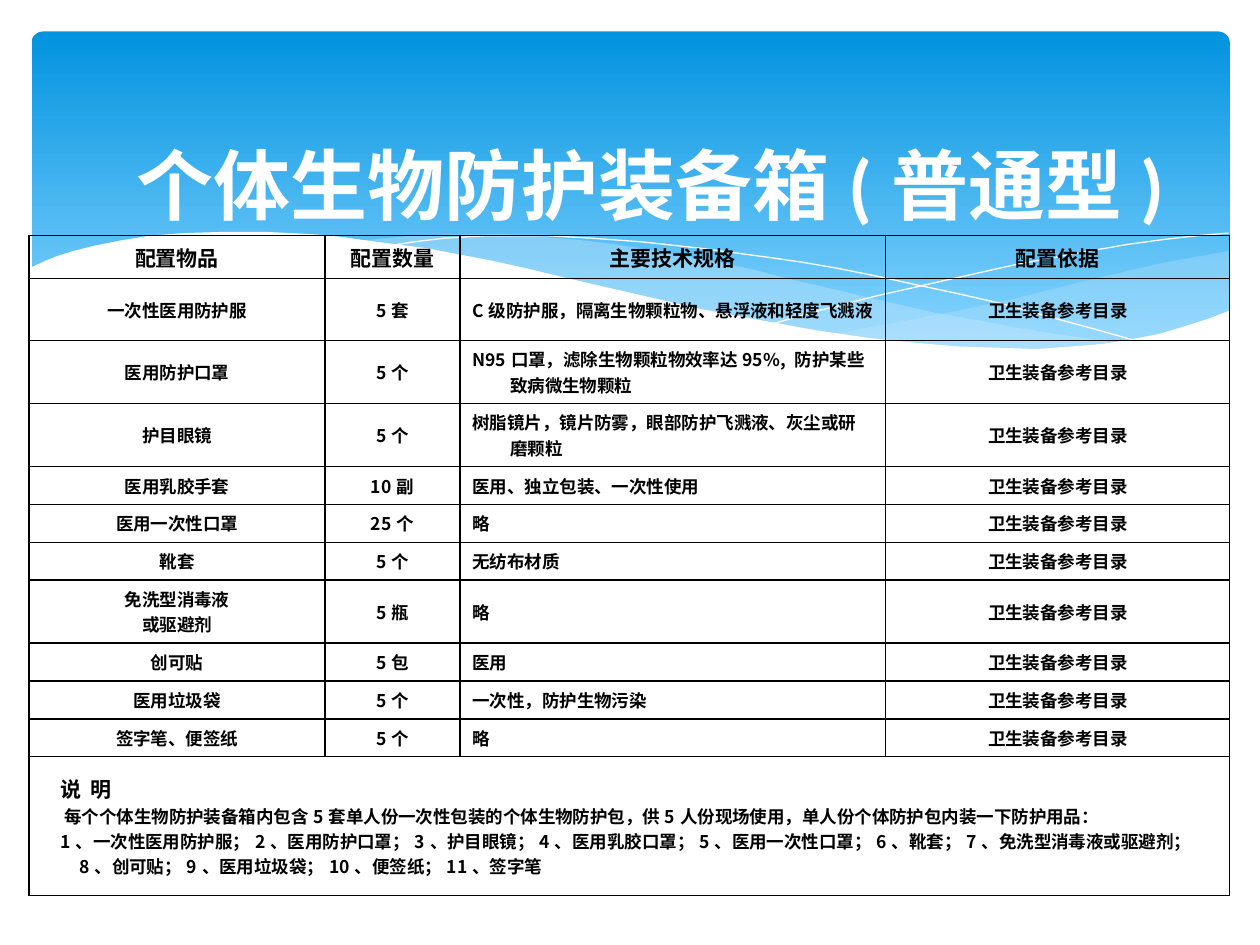
from lxml.etree import SubElement
from pptx import Presentation
from pptx.dml.color import RGBColor
from pptx.enum.shapes import MSO_SHAPE
from pptx.enum.text import MSO_ANCHOR, PP_ALIGN
from pptx.oxml.ns import qn
from pptx.util import Inches, Pt

WHITE = RGBColor(0xFF, 0xFF, 0xFF)
BLACK = RGBColor(0x00, 0x00, 0x00)
DEEP_BLUE = RGBColor(0x02, 0x93, 0xE0)
SKY_BLUE = RGBColor(0x83, 0xD3, 0xFE)
PALE_BLUE = RGBColor(0xC6, 0xE7, 0xFC)
CJK_FONT = "Noto Sans CJK SC"

RIGHT_WAVE = [
    (9.76, 1.99), (9.48, 2.04), (9.21, 2.09), (8.91, 2.16), (8.61, 2.23),
    (8.05, 2.37), (7.53, 2.48), (7.06, 2.57), (6.61, 2.65), (6.91, 2.69),
    (7.18, 2.72), (7.45, 2.75), (7.69, 2.77), (8.03, 2.78), (8.35, 2.77),
    (8.63, 2.75), (8.89, 2.72), (9.13, 2.67), (9.35, 2.61), (9.63, 2.52),
    (9.76, 2.47),
]
LONG_WAVE = [
    (8.93, 2.73), (8.66, 2.69), (8.37, 2.65), (8.07, 2.6), (7.75, 2.54),
    (7.41, 2.48), (7.06, 2.4), (6.68, 2.31), (6.29, 2.22), (5.98, 2.14),
    (5.69, 2.08), (5.41, 2.03), (5.14, 1.98), (4.89, 1.94), (4.65, 1.91),
    (4.42, 1.89), (4.2, 1.87), (3.99, 1.86), (3.61, 1.86), (3.28, 1.87),
    (2.86, 1.91), (3.23, 1.96), (3.62, 2.03), (4.04, 2.11), (4.49, 2.22),
    (4.91, 2.32), (5.3, 2.4), (5.66, 2.48), (6.01, 2.55), (6.34, 2.61),
    (6.65, 2.66), (6.95, 2.7), (7.22, 2.74), (7.48, 2.76), (7.73, 2.77),
    (7.96, 2.78), (8.28, 2.78), (8.57, 2.77), (8.76, 2.75),
]
FALLING_CURVE = [
    (3.09, 1.95), (3.28, 1.92), (3.53, 1.89), (3.87, 1.87), (4.33, 1.87),
    (4.69, 1.89), (5.1, 1.92), (5.56, 1.97), (6.08, 2.04), (6.36, 2.08),
    (6.65, 2.13), (6.95, 2.19), (7.27, 2.26), (7.6, 2.33), (7.95, 2.41),
    (8.31, 2.51), (8.68, 2.61), (9.07, 2.72),
]
RISING_CURVE = [
    (6.13, 2.57), (6.52, 2.46), (6.95, 2.35), (7.48, 2.23), (8.06, 2.1),
    (8.66, 1.99), (8.95, 1.94), (9.24, 1.9), (9.51, 1.87), (9.75, 1.85),
]
WHITE_WAVE = [
    (9.77, 2.46), (9.59, 2.53), (9.4, 2.59), (9.2, 2.65), (8.99, 2.69),
    (8.75, 2.73), (8.5, 2.75), (8.23, 2.77), (7.93, 2.76), (7.61, 2.75),
    (7.26, 2.72), (6.88, 2.68), (6.47, 2.62), (6.03, 2.54), (5.55, 2.45),
    (5.03, 2.33), (4.47, 2.2), (4.18, 2.13), (3.91, 2.07), (3.65, 2.02),
    (3.39, 1.97), (3.15, 1.94), (2.92, 1.91), (2.71, 1.88), (2.5, 1.86),
    (2.11, 1.84), (1.77, 1.84), (1.46, 1.85), (1.19, 1.87), (0.95, 1.91),
    (0.75, 1.95), (0.59, 1.99), (0.46, 2.03), (0.36, 2.07), (0.23, 2.13),
    (0.23, 3.29), (9.77, 3.29),
]

COLUMN_WIDTHS = [2.35, 1.07, 3.38, 2.73]
ROW_HEIGHTS = [0.34] + [0.49] * 3 + [0.3] * 3 + [0.49] + [0.3] * 3 + [1.1]
HEADERS = ["配置物品", "配置数量", "主要技术规格", "配置依据"]
BASIS = "卫生装备参考目录"
ITEMS = [
    ("一次性医用防护服", "5套", "C级防护服，隔离生物颗粒物、悬浮液和轻度飞溅液"),
    ("医用防护口罩", "5个", "N95口罩，滤除生物颗粒物效率达95%, 防护某些致病微生物颗粒"),
    ("护目眼镜", "5个", "树脂镜片，镜片防雾，眼部防护飞溅液、灰尘或研磨颗粒"),
    ("医用乳胶手套", "10副", "医用、独立包装、一次性使用"),
    ("医用一次性口罩", "25个", "略"),
    ("靴套", "5个", "无纺布材质"),
    ("免洗型消毒液\n或驱避剂", "5瓶", "略"),
    ("创可贴", "5包", "医用"),
    ("医用垃圾袋", "5个", "一次性，防护生物污染"),
    ("签字笔、便签纸", "5个", "略"),
]
NOTE_HEADING = "说  明"
NOTE_LINES = [
    " 每个个体生物防护装备箱内包含5套单人份一次性包装的个体生物防护包，供5人份现场使用，单人份个体防护包内装一下防护用品：",
    "1、一次性医用防护服；2、医用防护口罩；3、护目眼镜；4、医用乳胶口罩；5、医用一次性口罩；6、靴套；"
    "7、免洗型消毒液或驱避剂；8、创可贴；9、医用垃圾袋；10、便签纸；11、签字笔",
]


def write_text(paragraph, text, size=10, color=BLACK, font=CJK_FONT,
               align=PP_ALIGN.LEFT, margin=0.3, indent=-0.3):
    paragraph.alignment = align
    properties = paragraph._p.get_or_add_pPr()
    properties.set("marL", str(Inches(margin)))
    properties.set("indent", str(Inches(indent)))
    run = paragraph.add_run()
    run.text = text
    run.font.size = Pt(size)
    run.font.bold = True
    run.font.name = font
    run.font.color.rgb = color
    SubElement(run.font._element, qn("a:ea"), typeface=CJK_FONT)


def add_borders(cell, color=BLACK, width=1):
    properties = cell._tc.get_or_add_tcPr()
    for side in ("lnL", "lnR", "lnT", "lnB"):
        line = SubElement(properties, qn(f"a:{side}"), w=str(Pt(width)))
        fill = SubElement(line, qn("a:solidFill"))
        SubElement(fill, qn("a:srgbClr"), val=str(color))


class SlideBuilder:
    def __init__(self, slide):
        self.slide = slide

    def banner(self, left, top, width, height):
        shape = self.slide.shapes.add_shape(
            MSO_SHAPE.ROUNDED_RECTANGLE,
            Inches(left), Inches(top), Inches(width), Inches(height))
        shape.adjustments[0] = 0.034
        shape.shadow.inherit = False
        shape.line.fill.background()
        shape.fill.gradient()
        shape.fill.gradient_angle = 270
        stops = zip(shape.fill.gradient_stops, (0, 0.9), (DEEP_BLUE, SKY_BLUE))
        for stop, position, color in stops:
            stop.position = position
            stop.color.rgb = color

    def outline(self, points, closed):
        start, *rest = [(Inches(x), Inches(y)) for x, y in points]
        builder = self.slide.shapes.build_freeform(*start)
        builder.add_line_segments(rest, close=closed)
        shape = builder.convert_to_shape()
        shape.shadow.inherit = False
        return shape

    def wave(self, points, color, opacity=100):
        shape = self.outline(points, closed=True)
        shape.line.fill.background()
        shape.fill.solid()
        shape.fill.fore_color.rgb = color
        if opacity < 100:
            color_element = shape.element.spPr.find(".//" + qn("a:srgbClr"))
            SubElement(color_element, qn("a:alpha"), val=str(opacity * 1000))

    def curve(self, points):
        shape = self.outline(points, closed=False)
        shape.fill.background()
        shape.line.color.rgb = WHITE
        shape.line.width = Pt(0)

    def title(self, text, left, top, width, height):
        title = self.slide.shapes.title
        title.left, title.top = Inches(left), Inches(top)
        title.width, title.height = Inches(width), Inches(height)
        title.text_frame.vertical_anchor = MSO_ANCHOR.MIDDLE
        write_text(title.text_frame.paragraphs[0], text, size=44, color=WHITE,
                   font="Calibri", align=PP_ALIGN.CENTER, margin=0.92, indent=-0.92)
        # Bring the title in front of the waves
        self.slide.shapes.element.append(title.element)

    def equipment_table(self, left, top):
        table = self.slide.shapes.add_table(
            len(ROW_HEIGHTS), len(COLUMN_WIDTHS), Inches(left), Inches(top),
            Inches(sum(COLUMN_WIDTHS)), Inches(sum(ROW_HEIGHTS))).table
        table.first_row = table.horz_banding = False
        for column, width in zip(table.columns, COLUMN_WIDTHS):
            column.width = Inches(width)
        for row, height in zip(table.rows, ROW_HEIGHTS):
            row.height = Inches(height)
        for cell in table.iter_cells():
            add_borders(cell)
            cell.fill.background()
            cell.vertical_anchor = MSO_ANCHOR.MIDDLE

        for row_index, values in enumerate([HEADERS] + [(*item, BASIS) for item in ITEMS]):
            header = row_index == 0
            for column_index, value in enumerate(values):
                centered = header or column_index != 2
                self.fill_cell(table.cell(row_index, column_index), value.split("\n"),
                               size=12 if header else 10,
                               align=PP_ALIGN.CENTER if centered else PP_ALIGN.LEFT)

        last_row = len(ROW_HEIGHTS) - 1
        note = table.cell(last_row, 0)
        note.merge(table.cell(last_row, len(COLUMN_WIDTHS) - 1))
        self.fill_cell(note, [NOTE_HEADING], size=12, indent=-0.15)
        for line in NOTE_LINES:
            write_text(note.text_frame.add_paragraph(), line, indent=-0.15)

    def fill_cell(self, cell, lines, **style):
        frame = cell.text_frame
        for index, line in enumerate(lines):
            paragraph = frame.add_paragraph() if index else frame.paragraphs[0]
            write_text(paragraph, line, **style)


def main():
    presentation = Presentation()
    presentation.slide_width, presentation.slide_height = Inches(10), Inches(7.5)
    builder = SlideBuilder(presentation.slides.add_slide(presentation.slide_layouts[5]))
    builder.banner(0.25, 0.25, 9.51, 2.7)
    builder.wave(RIGHT_WAVE, PALE_BLUE, opacity=29)
    builder.wave(LONG_WAVE, PALE_BLUE, opacity=40)
    builder.curve(FALLING_CURVE)
    builder.curve(RISING_CURVE)
    builder.wave(WHITE_WAVE, WHITE)
    builder.title("个体生物防护装备箱(普通型)", 0.83, 0.83, 8.67, 1.25)
    builder.equipment_table(0.23, 1.87)
    presentation.save("out.pptx")


if __name__ == "__main__":
    main()
